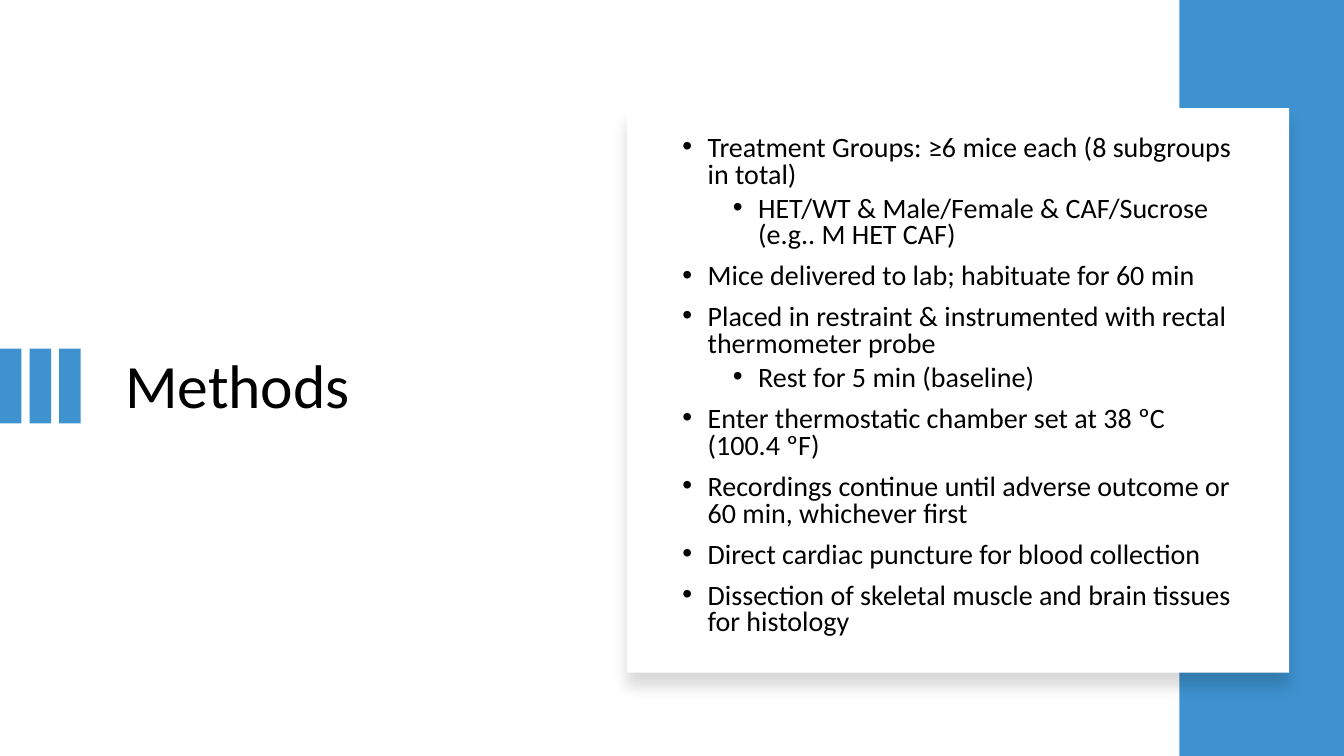
from lxml import etree
from pptx import Presentation
from pptx import util as u
from pptx.dml.color import RGBColor
from pptx.enum import shapes, text
from pptx.oxml import ns

WIDTH, HEIGHT = u.Inches(13.33), u.Inches(7.5)
FONT = "Calibri"
COLORS = {"accent": "3D92CF", "card": "FFFFFF", "ink": "000000"}
INDENTS = [0.25, 0.75]
SPACES = [10, 5]
STEPS = [
    (0, "Treatment Groups: ≥6 mice each (8 subgroups in total)"),
    (1, "HET/WT & Male/Female & CAF/Sucrose (e.g.. M HET CAF)"),
    (0, "Mice delivered to lab; habituate for 60 min"),
    (0, "Placed in restraint & instrumented with rectal thermometer probe"),
    (1, "Rest for 5 min (baseline)"),
    (0, "Enter thermostatic chamber set at 38 ºC (100.4 ºF)"),
    (0, "Recordings continue until adverse outcome or 60 min, whichever first"),
    (0, "Direct cardiac puncture for blood collection"),
    (0, "Dissection of skeletal muscle and brain tissues for histology"),
]


def share(left, top, width, height):
    return (int(WIDTH * left / 100), int(HEIGHT * top / 100),
            int(WIDTH * width / 100), int(HEIGHT * height / 100))


def add_block(slide, area, color):
    block = slide.shapes.add_shape(shapes.MSO_SHAPE.RECTANGLE, *share(*area))
    block.shadow.inherit = False
    block.fill.solid()
    block.fill.fore_color.rgb = RGBColor.from_string(COLORS[color])
    block.line.fill.background()
    return block


def add_shadow(block):
    effects = block._element.spPr.find(ns.qn("a:effectLst"))
    shadow = etree.SubElement(effects, ns.qn("a:outerShdw"), blurRad=str(u.Pt(11)),
                              dist=str(u.Pt(10)), dir="5400000", algn="t", rotWithShape="0")
    tint = etree.SubElement(shadow, ns.qn("a:srgbClr"), val=COLORS["ink"])
    etree.SubElement(tint, ns.qn("a:alpha"), val="15000")


def style_frame(frame):
    frame.word_wrap = True
    frame.auto_size = text.MSO_AUTO_SIZE.NONE
    frame.vertical_anchor = text.MSO_ANCHOR.MIDDLE


def style_paragraph(paragraph, size, spacing):
    paragraph.alignment = text.PP_ALIGN.LEFT
    paragraph.line_spacing = spacing
    for run in paragraph.runs:
        run.font.name = FONT
        run.font.size = u.Pt(size)
        run.font.color.rgb = RGBColor.from_string(COLORS["ink"])


def set_title(slide, wording, area):
    title = slide.shapes.title
    title.left, title.top, title.width, title.height = share(*area)
    title.text_frame.text = wording
    style_frame(title.text_frame)
    style_paragraph(title.text_frame.paragraphs[0], 44, 0.9)


def add_bullet(paragraph, level):
    paragraph.level = level
    properties = paragraph._p.get_or_add_pPr()
    properties.set("marL", str(u.Inches(INDENTS[level])))
    properties.set("indent", str(u.Inches(-0.25)))
    etree.SubElement(properties, ns.qn("a:buFont"), typeface="Arial")
    etree.SubElement(properties, ns.qn("a:buChar"), char="•")


def add_steps(slide, steps, area):
    frame = slide.shapes.add_textbox(*share(*area)).text_frame
    frame.text = "\n".join(wording for _, wording in steps)
    style_frame(frame)
    for index, (paragraph, (level, _)) in enumerate(zip(frame.paragraphs, steps)):
        add_bullet(paragraph, level)
        style_paragraph(paragraph, 20, 0.8)
        paragraph.space_before = u.Pt(SPACES[level] if index else 0)


def main():
    deck = Presentation()
    deck.slide_width, deck.slide_height = WIDTH, HEIGHT
    slide = deck.slides.add_slide(deck.slide_layouts[5])
    set_title(slide, "Methods", (8.55, 19.47, 31.96, 63.87))
    for column in range(3):
        add_block(slide, (2.2 * column, 46.13, 1.6, 9.87), "accent")
    add_block(slide, (87.75, 0, 12.25, 100), "accent")
    add_shadow(add_block(slide, (46.65, 14.3, 49.27, 74.67), "card"))
    add_steps(slide, STEPS, (50.04, 15.47, 43.14, 71.33))
    deck.save("out.pptx")


if __name__ == "__main__":
    main()
